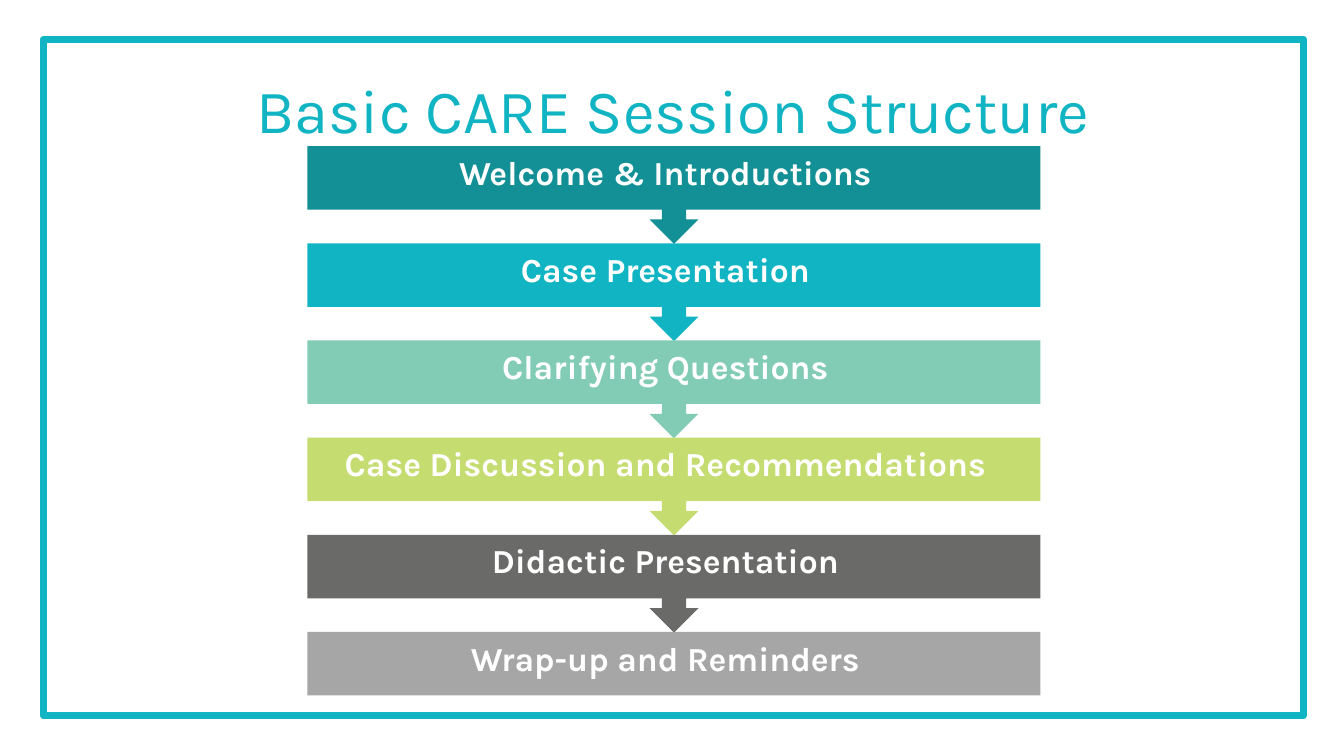
import pptx
import pptx.dml.color
import pptx.enum.shapes
import pptx.enum.text
import pptx.util

Inches = pptx.util.Inches
Pt = pptx.util.Pt
RGBColor = pptx.dml.color.RGBColor
Shapes = pptx.enum.shapes.MSO_SHAPE
Anchor = pptx.enum.text.MSO_ANCHOR

FONT = "Karla"
WHITE = RGBColor(0xFF, 0xFF, 0xFF)
TURQUOISE = RGBColor(0x11, 0xB4, 0xC3)
TEAL = RGBColor(0x12, 0x90, 0x96)
MINT = RGBColor(0x82, 0xCC, 0xB5)
LIME = RGBColor(0xC4, 0xDC, 0x70)
DARK_GREY = RGBColor(0x6A, 0x6A, 0x69)
LIGHT_GREY = RGBColor(0xA6, 0xA6, 0xA6)

TITLE = "Basic CARE Session Structure"
STEPS = [
    ("Welcome & Introductions", TEAL),
    ("Case Presentation", TURQUOISE),
    ("Clarifying Questions", MINT),
    ("Case Discussion and Recommendations", LIME),
    ("Didactic Presentation", DARK_GREY),
    ("Wrap-up and Reminders", LIGHT_GREY),
]

STEP_LEFT, STEP_WIDTH = 3.05, 7.27
FIRST_TOP, LAST_TOP = 1.45, 6.27
STEP_PITCH = (LAST_TOP - FIRST_TOP) / (len(STEPS) - 1)
BAR_HEIGHT, CALLOUT_HEIGHT = 0.63, 0.97


def write_text(shape, text, size, color, bold=False, anchor=Anchor.TOP,
               insets=(0.1, 0.05, 0.1, 0.05)):
    """Fill the shape with one centred paragraph; insets are left, top, right, bottom."""
    frame = shape.text_frame
    frame.word_wrap = True
    frame.vertical_anchor = anchor
    (frame.margin_left, frame.margin_top,
     frame.margin_right, frame.margin_bottom) = map(Inches, insets)
    para = frame.paragraphs[0]
    para.alignment = pptx.enum.text.PP_ALIGN.CENTER
    para.line_spacing = 0.9
    para.space_before = Pt(0)
    span = para.add_run()
    span.text = text
    span.font.name = FONT
    span.font.size = Pt(size)
    span.font.bold = bold
    span.font.color.rgb = color


def add_plain_shape(page, kind, left, top, width, height):
    shape = page.shapes.add_shape(
        kind, Inches(left), Inches(top), Inches(width), Inches(height))
    shape.shadow.inherit = False
    return shape


def add_border(page):
    border = add_plain_shape(page, Shapes.RECTANGLE, 0.43, 0.39, 12.5, 6.71)
    border.fill.background()
    border.line.color.rgb = TURQUOISE
    border.line.width = Pt(5.25)


def add_title(page):
    title = page.shapes.title
    title.left, title.top = Inches(0.47), Inches(0.4)
    title.width, title.height = Inches(12.42), Inches(1.45)
    write_text(title, TITLE, 44, TURQUOISE, anchor=Anchor.MIDDLE)


def add_steps(page):
    """Stack the steps; every one but the last points down to the next."""
    for index, (label, color) in enumerate(STEPS):
        is_last = index == len(STEPS) - 1
        kind = Shapes.RECTANGLE if is_last else Shapes.DOWN_ARROW_CALLOUT
        height = BAR_HEIGHT if is_last else CALLOUT_HEIGHT
        step = add_plain_shape(page, kind, STEP_LEFT,
                               FIRST_TOP + index * STEP_PITCH, STEP_WIDTH, height)
        step.fill.solid()
        step.fill.fore_color.rgb = color
        step.line.fill.background()
        write_text(step, label, 24, WHITE, bold=True,
                   insets=(0.1, 0.1, 0.27, 0.1))


def main():
    deck = pptx.Presentation()
    deck.slide_width, deck.slide_height = Inches(13.33), Inches(7.5)
    page = deck.slides.add_slide(deck.slide_layouts.get_by_name("Title Only"))
    add_border(page)
    add_steps(page)
    add_title(page)
    deck.save("out.pptx")


if __name__ == "__main__":
    main()
